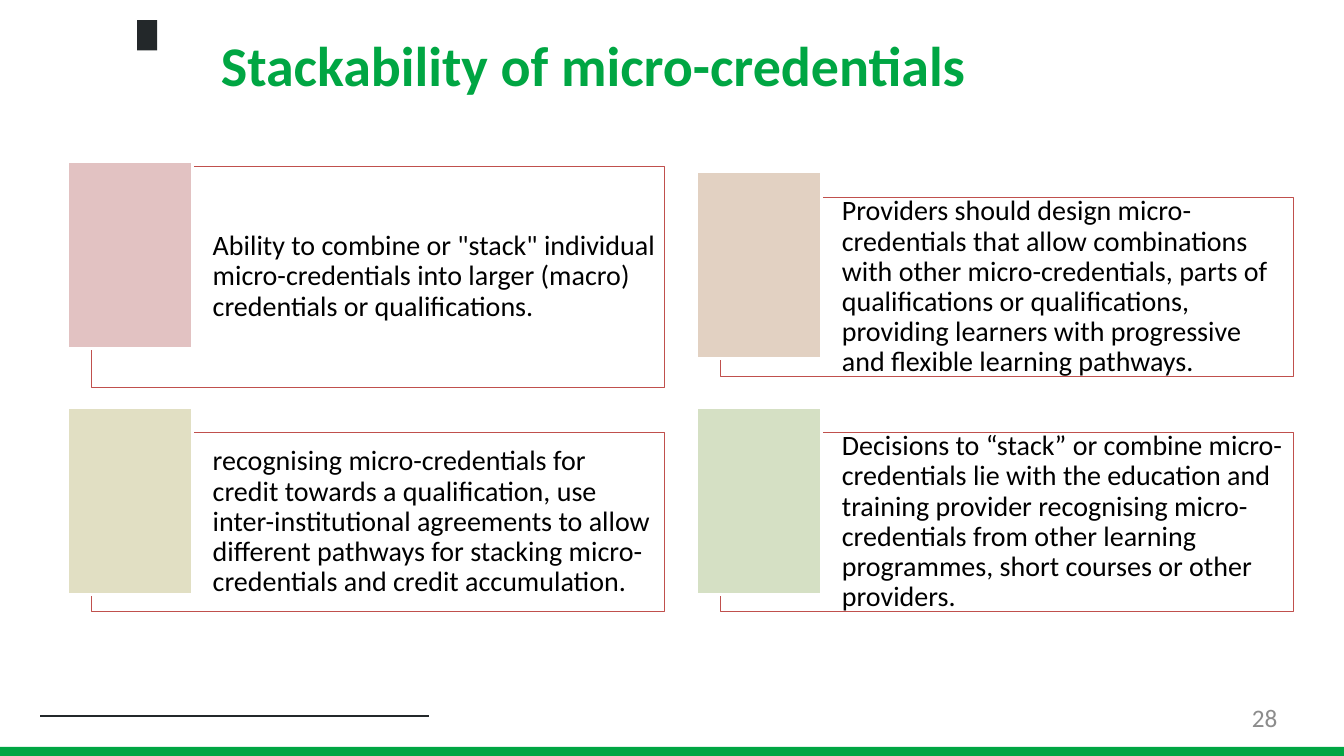
from lxml import etree
from pptx import Presentation
from pptx.dml.color import RGBColor
from pptx.enum.shapes import MSO_CONNECTOR, MSO_SHAPE
from pptx.enum.text import MSO_ANCHOR, MSO_AUTO_SIZE, PP_ALIGN
from pptx.oxml.ns import qn
from pptx.util import Inches, Pt

COLORS = {"green": "00A643", "dark": "23282A", "border": "C0504D",
          "white": "FFFFFF", "black": "000000", "gray": "8C8C8C",
          "rose": "E2C2C2", "sand": "E2D1C2", "olive": "E1DFC3", "sage": "D5E0C4"}


def add_block(left, top, width, height, fill, line=None, line_width=0):
    """Add a flat rectangle, outlined only when a line colour is given."""
    block = slide.shapes.add_shape(MSO_SHAPE.RECTANGLE, Inches(left), Inches(top),
                                   Inches(width), Inches(height))
    block.shadow.inherit = False
    block.fill.solid()
    block.fill.fore_color.rgb = RGBColor.from_string(COLORS[fill])
    if line:
        block.line.color.rgb = RGBColor.from_string(COLORS[line])
        block.line.width = Pt(line_width)
    else:
        block.line.fill.background()
    return block


def set_text(frame, text, size, color, align=PP_ALIGN.LEFT, bold=False):
    frame.word_wrap = True
    frame.text = text
    paragraph = frame.paragraphs[0]
    paragraph.alignment = align
    font = paragraph.runs[0].font
    formats = {"name": "Calibri", "size": Pt(size), "bold": bold}
    for key, value in formats.items():
        setattr(font, key, value)
    font.color.rgb = RGBColor.from_string(COLORS[color])
    return paragraph


prs = Presentation()
prs.slide_width, prs.slide_height = Inches(13.33), Inches(7.5)
slide = prs.slides.add_slide(prs.slide_layouts[5])

# Footer band, footer rule and header mark
add_block(0, 7.41, 13.33, 0.09, "green")
footer_rule = slide.shapes.add_connector(MSO_CONNECTOR.STRAIGHT, Inches(0.4), Inches(7.1),
                                         Inches(4.25), Inches(7.1))
footer_rule.line.color.rgb = RGBColor.from_string(COLORS["dark"])
footer_rule.line.width = Pt(1.5)
etree.SubElement(footer_rule._element.spPr, qn("a:effectLst"))
add_block(1.36, 0.2, 0.2, 0.3, "dark")

# Title
title = slide.shapes.title
title.left, title.top, title.width, title.height = map(Inches, (2.09, 0.25, 10.17, 0.77))
title.text_frame.vertical_anchor = MSO_ANCHOR.TOP
set_text(title.text_frame, "Stackability of micro-credentials", 40, "green", bold=True)
title.text_frame.auto_size = MSO_AUTO_SIZE.NONE

# Cards: left, top, height, swatch top, swatch colour, text
cards = [
    (0.91, 1.65, 2.19, 1.6, "rose",
     'Ability to combine or "stack" individual micro-credentials into larger (macro) '
     "credentials or qualifications."),
    (7.15, 1.96, 1.78, 1.7, "sand",
     "Providers should design micro-credentials that allow combinations with other "
     "micro-credentials, parts of qualifications or qualifications, providing learners "
     "with progressive and flexible learning pathways."),
    (0.91, 4.29, 1.78, 4.04, "olive",
     "recognising micro-credentials for credit towards a qualification, use "
     "inter-institutional agreements to allow different pathways for stacking "
     "micro-credentials and credit accumulation."),
    (7.15, 4.29, 1.78, 4.04, "sage",
     "Decisions to “stack” or combine micro-credentials lie with the education and "
     "training provider recognising micro-credentials from other learning programmes, "
     "short courses or other providers."),
]
for left, top, height, swatch_top, swatch_color, text in cards:
    card = add_block(left, top, 5.68, height, "white", "border", 0.75)
    white = card._element.spPr.find(qn("a:solidFill")).find(qn("a:srgbClr"))
    etree.SubElement(white, qn("a:alpha"), val="40000")
    frame = card.text_frame
    frame.vertical_anchor = MSO_ANCHOR.MIDDLE
    frame.margin_left = Inches(1.2)
    frame.margin_top = frame.margin_right = frame.margin_bottom = Inches(0.08)
    set_text(frame, text, 20, "black").line_spacing = 0.9
    add_block(left - 0.24, swatch_top, 1.24, 1.86, swatch_color, "white", 2)

# Page number
page_number = slide.shapes.add_textbox(Inches(9.6), Inches(6.97), Inches(3.07), Inches(0.38))
frame = page_number.text_frame
frame.margin_left = frame.margin_top = frame.margin_right = frame.margin_bottom = 0
set_text(frame, "28", 18, "gray", PP_ALIGN.RIGHT)

prs.save("out.pptx")
